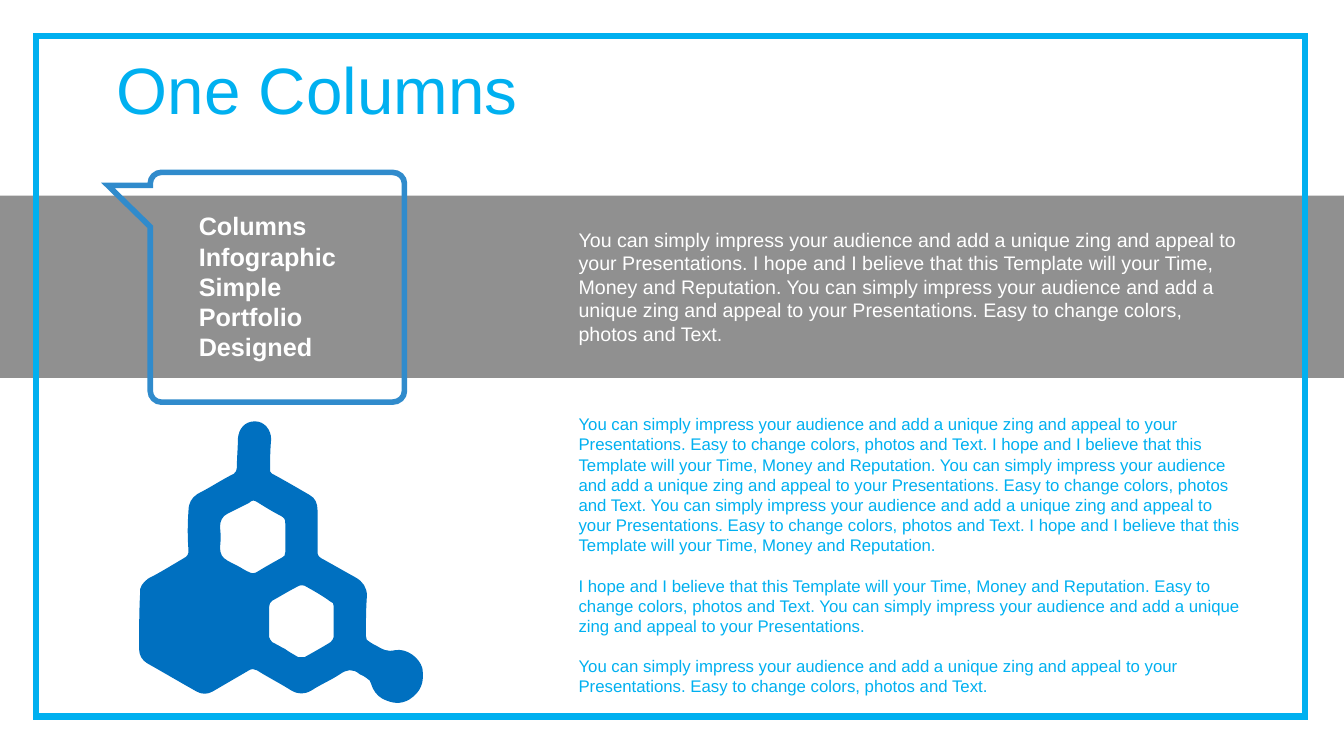
import collections

import pptx
import pptx.dml.color
import pptx.enum.shapes
import pptx.enum.text
import pptx.oxml
import pptx.oxml.ns
import pptx.util

SKY = pptx.dml.color.RGBColor(0x00, 0xB0, 0xF0)
OCEAN = pptx.dml.color.RGBColor(0x00, 0x70, 0xC0)
STEEL = pptx.dml.color.RGBColor(0x30, 0x8B, 0xCC)
GRAY = pptx.dml.color.RGBColor(0x90, 0x90, 0x90)
WHITE = pptx.dml.color.RGBColor(0xFF, 0xFF, 0xFF)

WIDTH = pptx.util.Inches(13.33)
HEIGHT = pptx.util.Inches(7.5)
RECTANGLE = pptx.enum.shapes.MSO_SHAPE.RECTANGLE
MIDDLE = pptx.enum.text.MSO_ANCHOR.MIDDLE
TOP = pptx.enum.text.MSO_ANCHOR.TOP

Box = collections.namedtuple("Box", "left top width height")

IMPRESS = ("You can simply impress your audience and add a unique zing "
           "and appeal to your Presentations.")
EASY = "Easy to change colors, photos and Text."
HOPE = ("I hope and I believe that this Template will your Time, "
        "Money and Reputation.")
INTRO = " ".join([IMPRESS, HOPE, IMPRESS, EASY])
DETAILS = [
    " ".join([IMPRESS, EASY, HOPE, IMPRESS, EASY, IMPRESS, EASY, HOPE]),
    " ".join([HOPE, EASY, IMPRESS]),
    " ".join([IMPRESS, EASY]),
]

CALLOUT_GRID = (294, 228)
CALLOUT_OUTLINE = [
    (53, 0), (282, 0), (289, 0, 294, 5, 294, 11),
    (294, 217), (294, 223, 289, 228, 282, 228),
    (53, 228), (47, 228, 42, 223, 42, 217),
    (42, 54), (0, 13), (42, 13), (42, 11), (42, 5, 47, 0, 53, 0),
]
MOLECULE_GRID = (283, 281)
MOLECULE_OUTLINE = [
    (241, 275), (236, 272, 232, 267, 230, 260), (230, 258, 228, 256, 226, 255),
    (224, 253, 221, 252, 219, 251), (212, 245, 206, 246, 199, 251),
    (190, 257, 180, 261, 171, 267), (164, 271, 158, 271, 151, 267),
    (140, 260, 128, 254, 117, 247), (114, 246, 112, 245, 109, 247),
    (97, 254, 85, 261, 73, 268), (68, 271, 62, 271, 57, 268),
    (41, 259, 24, 249, 8, 240), (3, 237, 0, 232, 0, 226),
    (0, 208, 0, 189, 1, 171), (0, 164, 4, 160, 9, 156),
    (21, 150, 32, 143, 44, 136), (48, 134, 49, 132, 49, 128),
    (48, 115, 48, 102, 49, 89), (49, 81, 52, 76, 58, 72),
    (70, 66, 82, 58, 94, 52), (96, 50, 97, 49, 97, 46),
    (97, 36, 98, 27, 98, 17), (99, 7, 105, 0, 115, 0),
    (124, 0, 131, 8, 131, 18), (130, 28, 130, 37, 130, 46),
    (129, 49, 130, 51, 132, 52), (145, 59, 157, 66, 169, 73),
    (175, 76, 177, 82, 177, 88), (177, 102, 177, 116, 177, 129),
    (177, 133, 178, 134, 181, 136), (192, 142, 204, 149, 215, 155),
    (222, 159, 226, 165, 226, 173), (225, 186, 225, 199, 225, 213),
    (225, 216, 226, 218, 229, 219), (231, 220, 233, 222, 236, 223),
    (241, 226, 246, 229, 254, 227), (265, 225, 278, 234, 281, 245),
    (283, 259, 280, 268, 268, 276), (259, 281, 251, 280, 241, 275),
]
LOWER_HOLE = [
    (145, 226), (149, 229, 153, 231, 158, 234), (159, 234, 163, 234, 164, 234),
    (173, 229, 182, 224, 190, 219), (192, 217, 193, 215, 193, 214),
    (193, 203, 193, 193, 193, 183), (193, 181, 192, 179, 190, 179),
    (182, 173, 173, 168, 164, 163), (162, 163, 160, 162, 159, 163),
    (149, 168, 141, 173, 132, 178), (130, 179, 129, 182, 129, 184),
    (129, 194, 129, 204, 129, 214), (129, 215, 131, 218, 132, 219),
    (136, 221, 141, 224, 145, 226),
]
UPPER_HOLE = [
    (97, 143), (101, 145, 105, 148, 110, 150), (111, 151, 114, 151, 116, 150),
    (124, 145, 133, 140, 142, 135), (144, 134, 145, 133, 145, 130),
    (145, 120, 145, 110, 145, 101), (145, 97, 144, 96, 141, 94),
    (133, 90, 125, 85, 117, 80), (114, 78, 112, 78, 109, 81),
    (105, 83, 101, 85, 97, 87), (92, 90, 84, 92, 82, 97),
    (79, 102, 81, 109, 81, 115), (81, 121, 79, 128, 82, 133),
    (84, 137, 91, 140, 97, 143),
]


def share(box, left, top, width, height):
    return Box(round(box.left + left * box.width), round(box.top + top * box.height),
               round(width * box.width), round(height * box.height))


def write_text(frame, paragraphs, *, size, color, bold=False, gap=0,
               line_spacing=None, anchor=TOP):
    frame.word_wrap = True
    frame.auto_size = pptx.enum.text.MSO_AUTO_SIZE.NONE
    frame.vertical_anchor = anchor
    for index, text in enumerate(paragraphs):
        paragraph = frame.add_paragraph() if index else frame.paragraphs[0]
        paragraph.alignment = pptx.enum.text.PP_ALIGN.LEFT
        paragraph.space_before = pptx.util.Pt(gap if index else 0)
        paragraph.line_spacing = line_spacing
        run = paragraph.add_run()
        run.text = text
        run.font.name = "Arial"
        run.font.size = pptx.util.Pt(size)
        run.font.bold = bold
        run.font.color.rgb = color


def paint(shape, fill=None, line=None, line_width=0):
    shape.shadow.inherit = False
    if fill is None:
        shape.fill.background()
    else:
        shape.fill.solid()
        shape.fill.fore_color.rgb = fill
    if line is None:
        shape.line.fill.background()
    else:
        shape.line.color.rgb = line
        shape.line.width = pptx.util.Pt(line_width)
        miter = pptx.oxml.parse_xml(
            f'<a:miter {pptx.oxml.ns.nsdecls("a")} lim="800000"/>')
        shape.line._get_or_add_ln().append(miter)


def bend(segment, controls, shape):
    points = "".join(f'<a:pt x="{round(x - shape.left)}" y="{round(y - shape.top)}"/>'
                     for x, y in controls)
    curve = pptx.oxml.parse_xml(
        f'<a:cubicBezTo {pptx.oxml.ns.nsdecls("a")}>{points}</a:cubicBezTo>')
    curve.append(segment[0])
    segment.getparent().replace(segment, curve)


def draw_outlines(slide, box, grid, outlines):
    def locate(step):
        return [(box.left + x * box.width / grid[0], box.top + y * box.height / grid[1])
                for x, y in zip(step[::2], step[1::2])]

    loops = [[locate(step) for step in outline] for outline in outlines]
    builder = slide.shapes.build_freeform(*loops[0][0][-1], scale=1.0)
    for index, loop in enumerate(loops):
        if index:
            builder.move_to(*loop[0][-1])
        builder.add_line_segments([step[-1] for step in loop[1:]], close=True)
    shape = builder.convert_to_shape()
    segments = list(shape.element.iter(pptx.oxml.ns.qn("a:lnTo")))
    steps = [step for loop in loops for step in loop[1:]]
    for segment, step in zip(segments, steps):
        if len(step) == 3:
            bend(segment, step[:2], shape)
    return shape


def place_title(slide, box):
    title = slide.shapes.title
    title.left, title.top, title.width, title.height = box
    title.text_frame.margin_bottom = pptx.util.Inches(0.12)
    write_text(title.text_frame, ["One Columns"], size=46.8, color=SKY,
               line_spacing=0.8, anchor=MIDDLE)


def place_band(slide, box):
    paint(slide.shapes.add_shape(RECTANGLE, *box), fill=GRAY)


def place_intro(slide, box):
    intro = slide.shapes.add_textbox(*box)
    write_text(intro.text_frame, [INTRO], size=14, color=WHITE)


def place_callout(slide, box):
    bubble = draw_outlines(slide, box, CALLOUT_GRID, [CALLOUT_OUTLINE])
    paint(bubble, line=STEEL, line_width=4)
    keywords = slide.shapes.add_textbox(*share(box, 0.273, 0.145, 0.616, 0.71))
    write_text(keywords.text_frame, ["Columns Infographic Simple Portfolio Designed"],
               size=18, color=WHITE, bold=True)


def place_details(slide, box):
    details = slide.shapes.add_textbox(*box)
    write_text(details.text_frame, DETAILS, size=12, color=SKY, gap=14.4)


def place_molecule(slide, box):
    molecule = draw_outlines(slide, box, MOLECULE_GRID,
                             [MOLECULE_OUTLINE, LOWER_HOLE, UPPER_HOLE])
    paint(molecule, fill=OCEAN)


def place_frame(slide, box):
    paint(slide.shapes.add_shape(RECTANGLE, *box), line=SKY, line_width=4.5)


def main():
    deck = pptx.Presentation()
    deck.slide_width, deck.slide_height = WIDTH, HEIGHT
    slide = deck.slides.add_slide(deck.slide_layouts.get_by_name("Title Only"))
    page = Box(0, 0, WIDTH, HEIGHT)
    place_title(slide, share(page, 0.0795, 0.0787, 0.9205, 0.104))
    place_band(slide, share(page, 0, 0.2587, 1, 0.2413))
    place_callout(slide, share(page, 0.0803, 0.228, 0.2206, 0.304))
    place_details(slide, share(page, 0.4231, 0.541, 0.5079, 0.3907))
    place_intro(slide, share(page, 0.4231, 0.2944, 0.5079, 0.1707))
    place_molecule(slide, share(page, 0.1035, 0.5573, 0.2123, 0.3747))
    place_frame(slide, share(page, 0.027, 0.048, 0.944, 0.9))
    deck.save("out.pptx")


if __name__ == "__main__":
    main()
